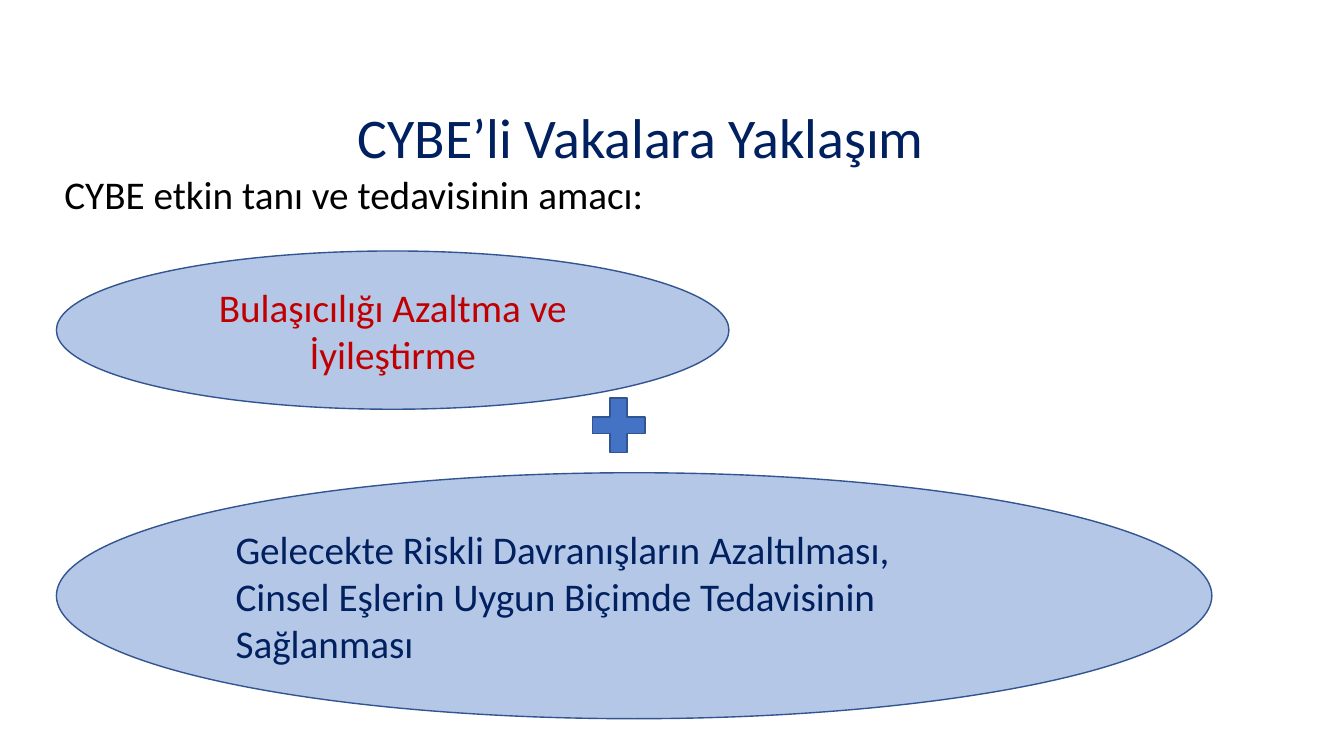
from pptx import Presentation
from pptx.dml.color import RGBColor
from pptx.enum.shapes import MSO_SHAPE
from pptx.enum.text import MSO_ANCHOR, PP_ALIGN
from pptx.util import Inches, Pt

NAVY, RED, BLACK = "002060", "C00000", "000000"
PALE_BLUE, BLUE, OUTLINE = "B4C7E7", "4472C4", "325491"


def color(value):
    return RGBColor.from_string(value)


def write(sp, lines, size, font_color, **paragraph_format):
    tf = sp.text_frame
    tf.word_wrap = True
    tf.vertical_anchor = MSO_ANCHOR.MIDDLE
    tf.text = "\n".join(lines)
    for p in tf.paragraphs:
        for name, value in paragraph_format.items():
            setattr(p, name, value)
        for r in p.runs:
            for name, value in {"name": "Calibri", "size": Pt(size)}.items():
                setattr(r.font, name, value)
            r.font.color.rgb = color(font_color)


def add_title(s, box, text):
    sp = s.shapes.title
    sp.left, sp.top, sp.width, sp.height = map(Inches, box)
    write(sp, [text], 40, NAVY, alignment=PP_ALIGN.CENTER, line_spacing=0.9)


def add_label(s, box, text):
    sp = s.shapes.add_textbox(*map(Inches, box))
    write(sp, [text], 28, BLACK, alignment=PP_ALIGN.LEFT, line_spacing=0.9)


def add_figure(s, kind, box, fill):
    sp = s.shapes.add_shape(kind, *map(Inches, box))
    sp.shadow.inherit = False
    sp.fill.solid()
    sp.fill.fore_color.rgb = color(fill)
    sp.line.color.rgb = color(OUTLINE)
    sp.line.width = Pt(1)
    return sp


def add_goal(s, box, lines, font_color, alignment):
    sp = add_figure(s, MSO_SHAPE.OVAL, box, PALE_BLUE)
    write(sp, lines, 28, font_color, alignment=alignment)


def main():
    prs = Presentation()
    prs.slide_width, prs.slide_height = Inches(13.33), Inches(7.5)
    s = prs.slides.add_slide(prs.slide_layouts[5])
    add_title(s, (0.43, 1.04, 11.85, 0.71), "CYBE’li Vakalara Yaklaşım")
    add_label(s, (0.54, 1.68, 11.9, 0.55), "CYBE etkin tanı ve tedavisinin amacı:")
    add_goal(s, (0.56, 2.49, 6.67, 1.57),
             ["Bulaşıcılığı Azaltma ve", "İyileştirme"], RED, PP_ALIGN.CENTER)
    add_figure(s, MSO_SHAPE.MATH_PLUS, (5.78, 3.85, 0.71, 0.74), BLUE)
    add_goal(s, (0.56, 4.69, 11.46, 2.44),
             ["Gelecekte Riskli Davranışların Azaltılması,",
              "Cinsel Eşlerin Uygun Biçimde Tedavisinin Sağlanması"],
             NAVY, PP_ALIGN.LEFT)
    prs.save("out.pptx")


if __name__ == "__main__":
    main()
